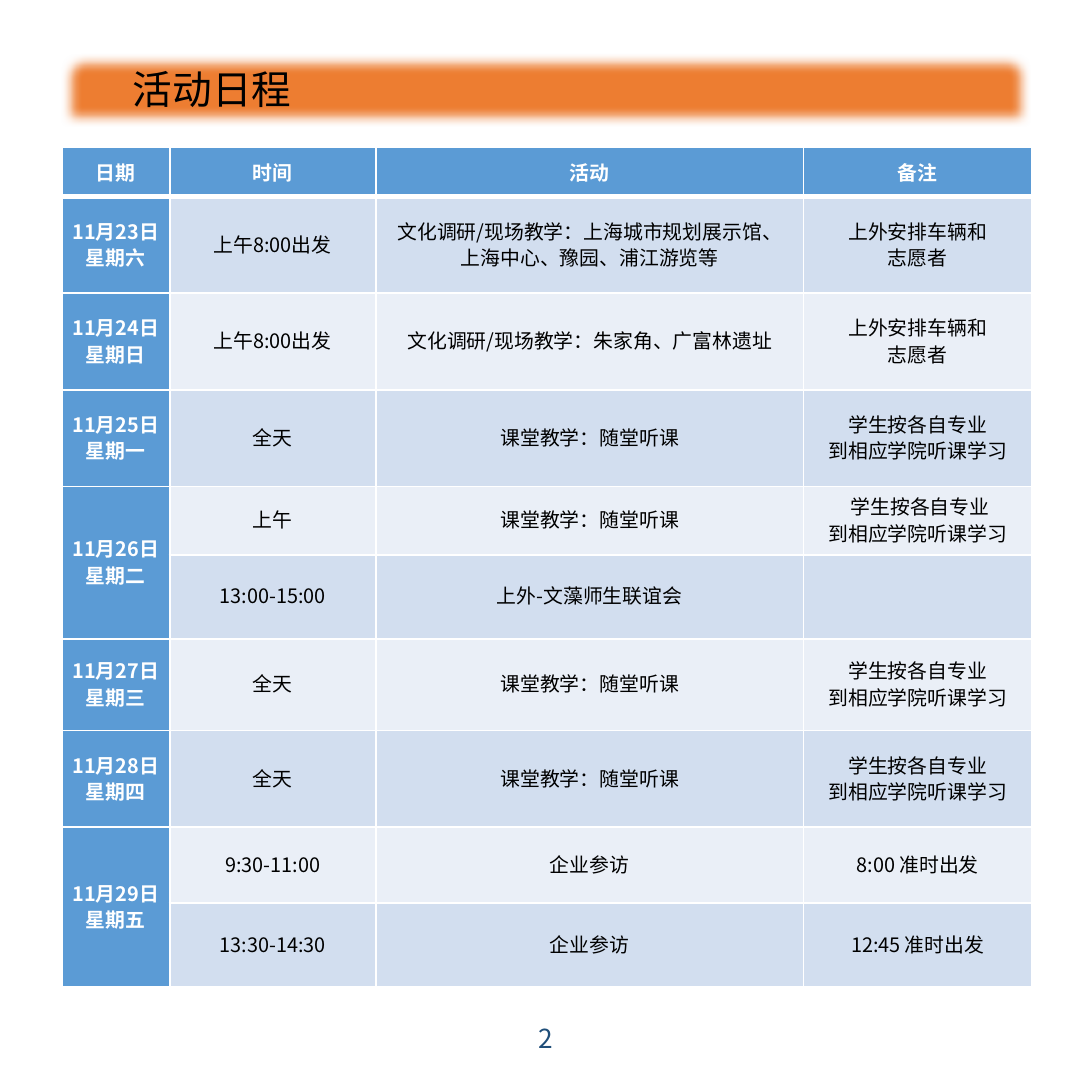
import pptx
import pptx.dml.color
import pptx.enum.shapes
import pptx.enum.text
import pptx.util
from lxml import etree
from pptx.oxml.ns import qn

INCH = pptx.util.Inches
PT = pptx.util.Pt
FONT = "Noto Sans CJK SC"
ALIGN = pptx.enum.text.PP_ALIGN
MIDDLE = pptx.enum.text.MSO_ANCHOR.MIDDLE
SIDE = 6.89
MARGIN = 0.39
WIDTH = SIDE - 2 * MARGIN


def paint(target, color):
    """Give a fill or a line's fill one solid colour from a hex string."""
    target.solid()
    target.fore_color.rgb = pptx.dml.color.RGBColor.from_string(color)


def write(frame, text, size, color, align, bold=False, spacing=None):
    """Write each line of the text as a paragraph of its own."""
    for number, line in enumerate(text.split("\n")):
        para = frame.add_paragraph() if number else frame.paragraphs[0]
        para.alignment = align
        if spacing:
            para.line_spacing = PT(spacing)
        span = para.add_run()
        span.text = line
        for name, value in {"size": PT(size), "bold": bold, "name": FONT}.items():
            setattr(span.font, name, value)
        paint(span.font.fill, color)
        etree.SubElement(span.font._element, qn("a:ea"), typeface=FONT)


deck = pptx.Presentation()
deck.slide_width = deck.slide_height = INCH(SIDE)
page = deck.slides.add_slide(deck.slide_layouts[6])

# Page number
number_box = page.shapes.add_textbox(0, INCH(6.4), deck.slide_width, INCH(0.3))
number_box.text_frame.word_wrap = True
number_box.text_frame.vertical_anchor = MIDDLE
write(number_box.text_frame, "2", 11.9, "1F4E79", ALIGN.CENTER)

# Soft-edged banner and title
banner = page.shapes.add_shape(
    pptx.enum.shapes.MSO_SHAPE.ROUND_2_SAME_RECTANGLE,
    INCH(MARGIN), INCH(0.34), INCH(WIDTH), INCH(0.46))
banner.shadow.inherit = False
paint(banner.fill, "ED7D31")
banner.line.fill.background()
effects = banner._element.spPr.find(qn("a:effectLst"))
etree.SubElement(effects, qn("a:softEdge"), rad=str(PT(5)))

title_box = page.shapes.add_textbox(INCH(0.74), INCH(0.36), INCH(1.21), INCH(0.4))
title_box.text_frame.word_wrap = False
write(title_box.text_frame, "活动日程", 18, "000000", ALIGN.LEFT)

# Schedule: an empty date continues the day above
LESSON = "课堂教学：随堂听课"
LISTEN = "学生按各自专业\n到相应学院听课学习"
ESCORT = "上外安排车辆和\n志愿者"
SCHEDULE = [
    ("日期", "时间", "活动", "备注"),
    ("11月23日\n星期六", "上午8:00出发",
     "文化调研/现场教学：上海城市规划展示馆、\n上海中心、豫园、浦江游览等", ESCORT),
    ("11月24日\n星期日", "上午8:00出发", "文化调研/现场教学：朱家角、广富林遗址", ESCORT),
    ("11月25日\n星期一", "全天", LESSON, LISTEN),
    ("11月26日\n星期二", "上午", LESSON, " " + LISTEN),
    ("", "13:00-15:00", "上外-文藻师生联谊会", ""),
    ("11月27日\n星期三", "全天", LESSON, LISTEN),
    ("11月28日\n星期四", "全天", LESSON, LISTEN),
    ("11月29日\n星期五", "9:30-11:00", "企业参访", "8:00 准时出发"),
    ("", "13:30-14:30", "企业参访", "12:45 准时出发"),
]
COLUMNS = [0.68, 1.3, 2.7, 1.44]
ROWS = [0.31, 0.61, 0.61, 0.61, 0.43, 0.53, 0.58, 0.61, 0.48, 0.53]
BANDS = ["EAEFF7", "D2DEEF"]
CELL_FORMAT = {
    "margin_left": INCH(0.04), "margin_right": INCH(0.04),
    "margin_top": 0, "margin_bottom": 0, "vertical_anchor": MIDDLE,
}

table = page.shapes.add_table(
    len(ROWS), len(COLUMNS), INCH(MARGIN), INCH(0.93),
    INCH(sum(COLUMNS)), INCH(sum(ROWS))).table
for column, width in zip(table.columns, COLUMNS):
    column.width = INCH(width)
for row, height in zip(table.rows, ROWS):
    row.height = INCH(height)

for row, texts in enumerate(SCHEDULE):
    for column, text in enumerate(texts):
        cell = table.cell(row, column)
        for name, value in CELL_FORMAT.items():
            setattr(cell, name, value)
        heading = row == 0 or column == 0
        for edge in "LRTB":
            thick = (row == 0 and edge == "B") or (row == 1 and edge == "T")
            border = etree.SubElement(
                cell._tc.get_or_add_tcPr(), qn("a:ln" + edge),
                w=str(PT(3 if thick else 1)))
            fill = etree.SubElement(border, qn("a:solidFill"))
            etree.SubElement(fill, qn("a:srgbClr"), val="FFFFFF")
        paint(cell.fill, "5B9BD5" if heading else BANDS[row % 2])
        if text:
            write(cell.text_frame, text, 9, "FFFFFF" if heading else "000000",
                  ALIGN.CENTER, heading, 12 if row else None)
    if not texts[0]:
        table.cell(row - 1, 0).merge(table.cell(row, 0))

deck.save("out.pptx")
